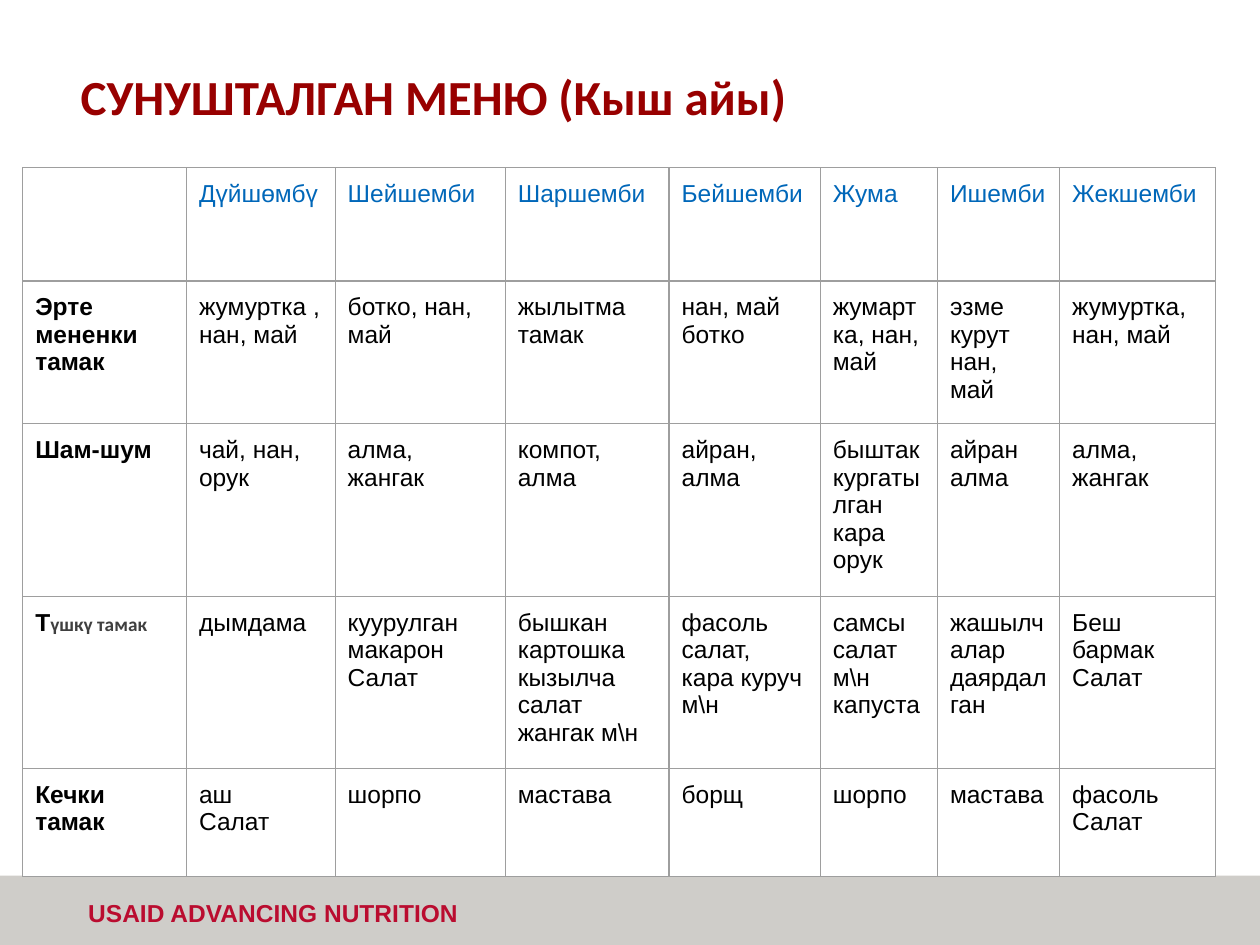
"""Build the weekly winter menu slide."""
from lxml.etree import SubElement
from pptx import Presentation
from pptx.dml.color import RGBColor
from pptx.enum.shapes import MSO_SHAPE
from pptx.enum.text import MSO_ANCHOR
from pptx.oxml.ns import qn
from pptx.util import Inches, Pt

BLACK = RGBColor(0x00, 0x00, 0x00)
WHITE = RGBColor(0xFF, 0xFF, 0xFF)
BLUE = RGBColor(0x00, 0x67, 0xB9)
MAROON = RGBColor(0x98, 0x00, 0x00)
CRIMSON = RGBColor(0xBA, 0x0C, 0x2F)
BAND_GREY = RGBColor(0xCF, 0xCD, 0xC9)
TEXT_GREY = RGBColor(0x3F, 0x3F, 0x3F)
BORDER_GREY = RGBColor(0x9E, 0x9E, 0x9E)

TITLE = "СУНУШТАЛГАН МЕНЮ (Кыш айы)"
FOOTER = "USAID ADVANCING NUTRITION"
LUNCH_LABEL = ("Т", "үшкү тамак")
MENU = [
    ["", "Дүйшөмбү", "Шейшемби", "Шаршемби", "Бейшемби", "Жума", "Ишемби", "Жекшемби"],
    ["Эрте мененки тамак", "жумуртка , нан, май", "ботко, нан, май", "жылытма тамак",
     "нан, май ботко", "жумартка, нан, май", "эзме курут нан, май", "жумуртка, нан, май"],
    ["Шам-шум", "чай, нан,\nорук", "алма, жангак", "компот, алма", "айран,\nалма",
     "быштак\nкургатылган кара орук", "айран\nалма", "алма, жангак"],
    [LUNCH_LABEL[0], "дымдама", "куурулган макарон\nСалат",
     "бышкан картошка\nкызылча салат жангак м\\н", "фасоль салат, кара куруч м\\н",
     "самсы салат м\\н\nкапуста", "жашылчалар даярдалган", "Беш бармак\nСалат"],
    ["Кечки тамак", "аш\nСалат", "шорпо", "мастава", "борщ", "шорпо", "мастава",
     "фасоль Салат"],
]
COLUMN_WIDTHS = [1.3, 1.18, 1.35, 1.3, 1.2, 0.93, 0.97, 1.24]
ROW_HEIGHTS = [0.9, 1.07, 1.29, 1.29, 0.86]
CELL_MARGIN = 0.1


def font_values(size, name, color, bold):
    return {"size": Pt(size), "name": name, "bold": bold, "color": color}


def set_font(font, values):
    for key, value in values.items():
        if key == "color":
            font.color.rgb = value
        else:
            setattr(font, key, value)


def set_frame(target, margin, anchor):
    for side in ("left", "top", "right", "bottom"):
        setattr(target, f"margin_{side}", Inches(margin))
    target.vertical_anchor = anchor


def add_text(slide, box, text, anchor, values, line_spacing=1.0):
    frame = slide.shapes.add_textbox(*map(Inches, box)).text_frame
    frame.word_wrap = True
    set_frame(frame, 0, anchor)
    paragraph = frame.paragraphs[0]
    paragraph.text = text
    paragraph.line_spacing = line_spacing
    set_font(paragraph.runs[0].font, values)


def add_borders(cell):
    properties = cell._tc.get_or_add_tcPr()
    for position, tag in enumerate(("a:lnL", "a:lnR", "a:lnT", "a:lnB")):
        line = SubElement(properties, qn(tag), w=str(Pt(0.75)))
        properties.insert(position, line)
        fill = SubElement(line, qn("a:solidFill"))
        SubElement(fill, qn("a:srgbClr"), val=str(BORDER_GREY))


def add_menu(slide):
    table = slide.shapes.add_table(
        len(MENU), len(MENU[0]), Inches(0.18), Inches(1.33),
        Inches(sum(COLUMN_WIDTHS)), Inches(sum(ROW_HEIGHTS))).table
    table.horz_banding = False
    for column, width in zip(table.columns, COLUMN_WIDTHS):
        column.width = Inches(width)
    for row, height in zip(table.rows, ROW_HEIGHTS):
        row.height = Inches(height)
    for row_index, texts in enumerate(MENU):
        for column_index, text in enumerate(texts):
            cell = table.cell(row_index, column_index)
            cell.text = text
            set_frame(cell, CELL_MARGIN, MSO_ANCHOR.TOP)
            cell.fill.solid()
            cell.fill.fore_color.rgb = WHITE
            add_borders(cell)
            color = BLACK if row_index else BLUE
            for paragraph in cell.text_frame.paragraphs:
                for run in paragraph.runs:
                    set_font(run.font, font_values(14, "Arial", color, column_index == 0))
    run = table.cell(3, 0).text_frame.paragraphs[0].add_run()
    run.text = LUNCH_LABEL[1]
    set_font(run.font, font_values(11, "Calibri", TEXT_GREY, True))


def main():
    presentation = Presentation()
    presentation.slide_width, presentation.slide_height = Inches(10), Inches(7.5)
    slide = presentation.slides.add_slide(presentation.slide_layouts[6])
    band = slide.shapes.add_shape(
        MSO_SHAPE.RECTANGLE, 0, Inches(6.95), Inches(10), Inches(0.55))
    band.shadow.inherit = False
    band.fill.solid()
    band.fill.fore_color.rgb = BAND_GREY
    band.line.fill.background()
    add_text(slide, (0.7, 7.12, 4.55, 0.24), FOOTER, MSO_ANCHOR.MIDDLE,
             font_values(14, "Arial", CRIMSON, True))
    add_text(slide, (0.64, 0.58, 8.71, 0.91), TITLE, MSO_ANCHOR.TOP,
             font_values(28, "Calibri", MAROON, True), 0.9)
    add_menu(slide)
    presentation.save("out.pptx")


if __name__ == "__main__":
    main()
